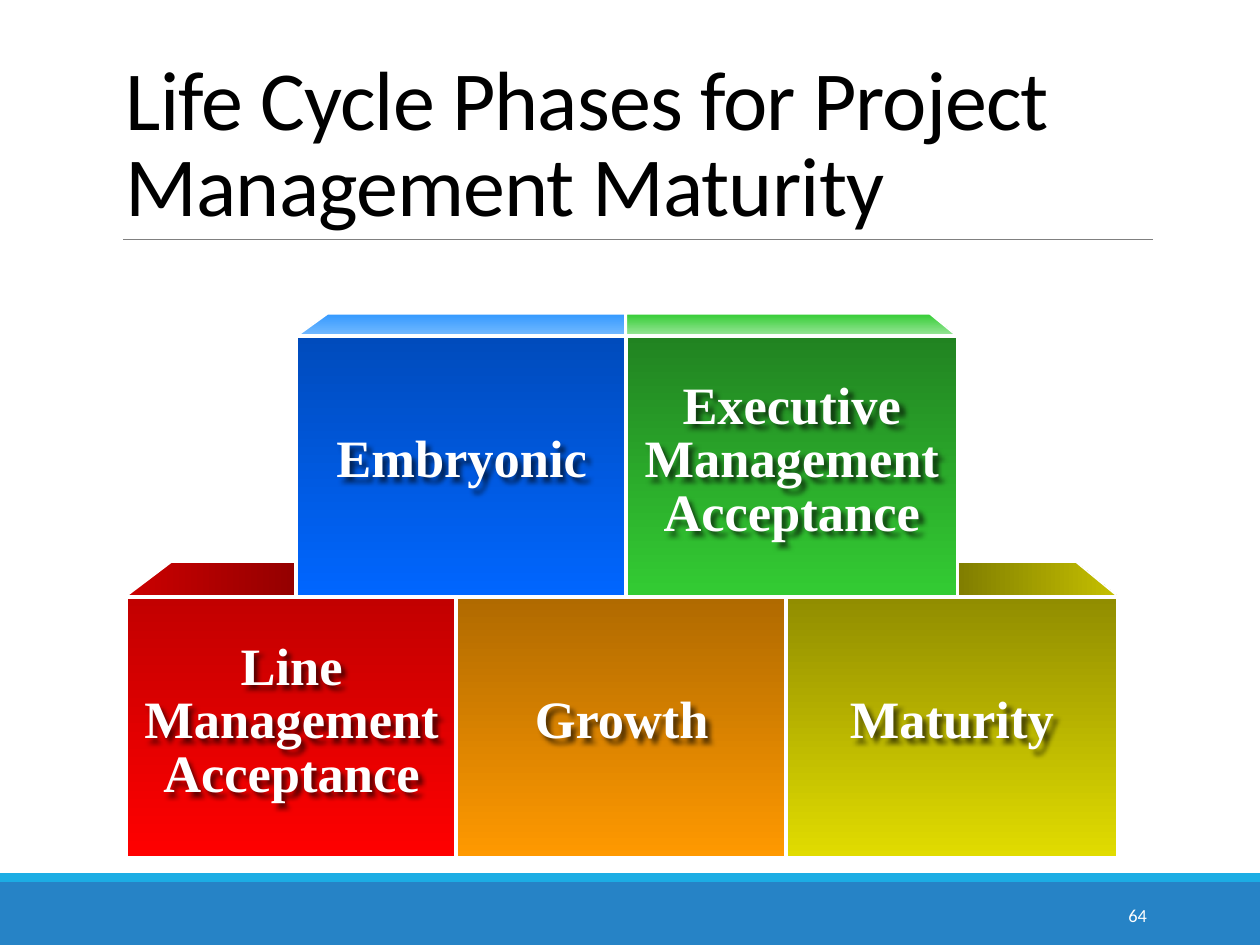
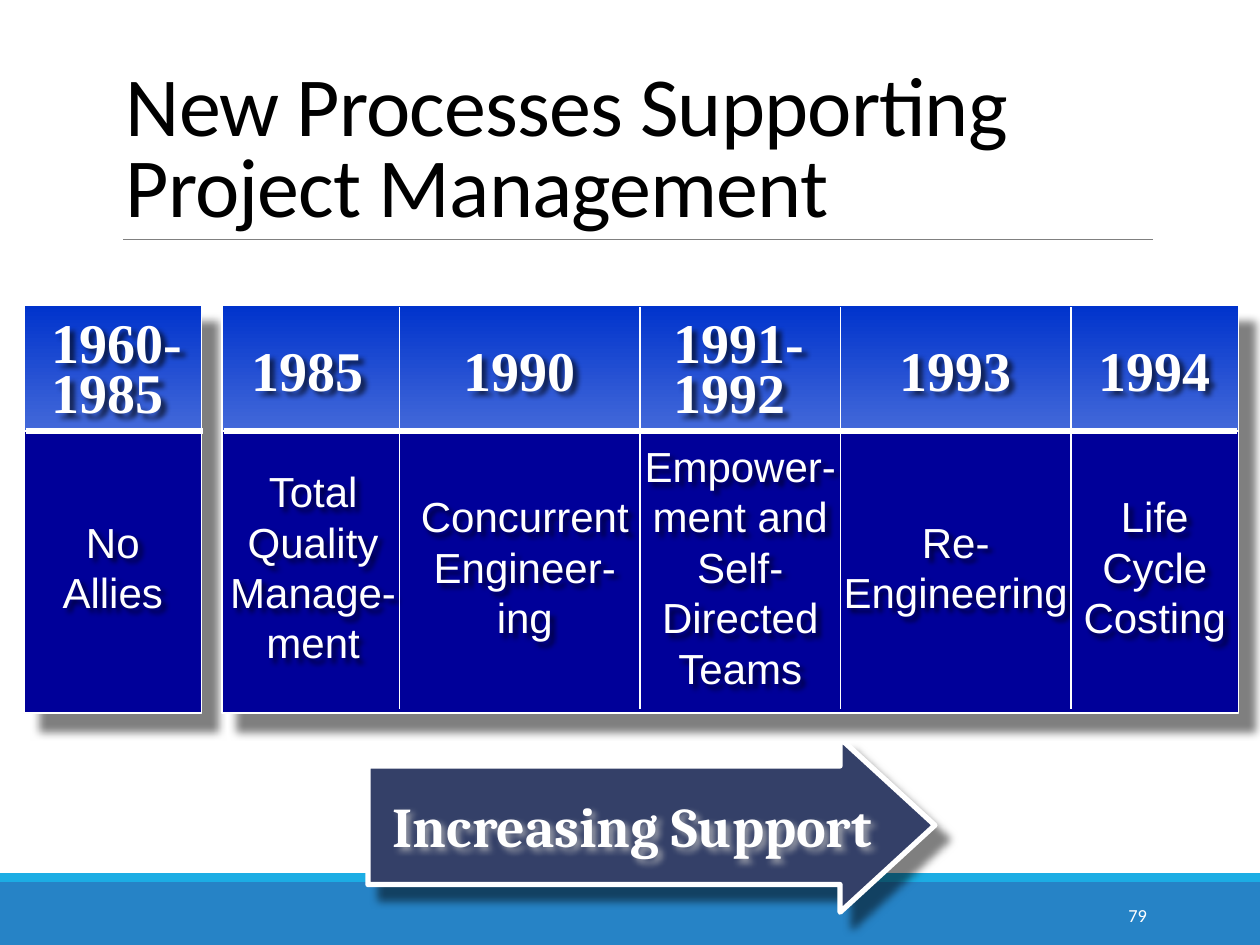
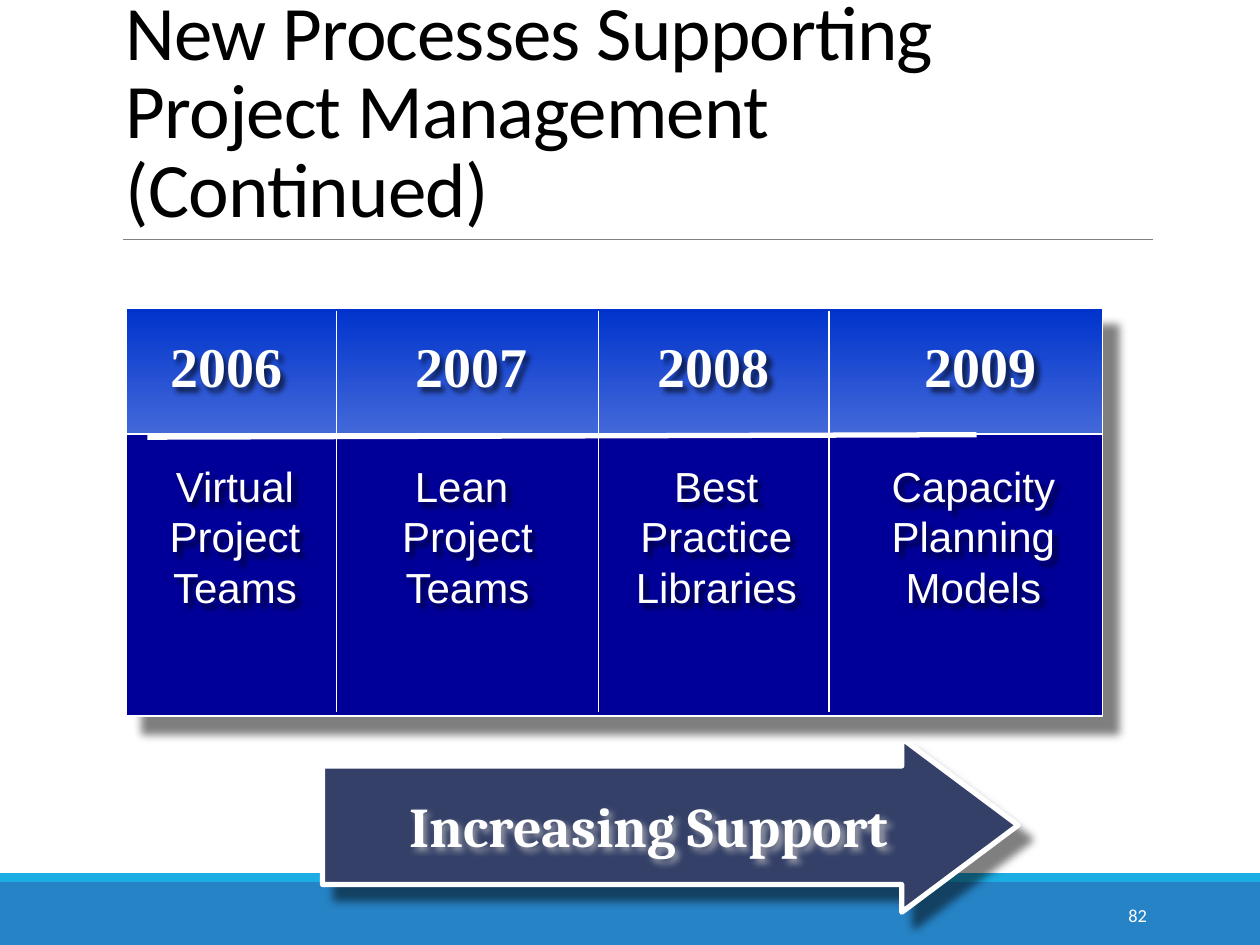
from dataclasses import dataclass

from lxml.etree import SubElement
from pptx import Presentation
from pptx.dml.color import RGBColor
from pptx.enum.shapes import MSO_CONNECTOR, MSO_SHAPE
from pptx.enum.text import MSO_ANCHOR as Anchor, PP_ALIGN as Align
from pptx.oxml.ns import qn
from pptx.util import Inches, Pt

COLUMNS, ROWS = 100, 75  # grid of the slide
INSET = 1  # side inset of a text box, in columns

WHITE, BLACK = "FFFFFF", "000000"
NAVY, ARROW, RULE = "000099", "344068", "808080"
BAND, BAND_EDGE = "2683C6", "1CADE4"
HEAD_FADE = ("0033CC", "4369D9")
SERIF, SANS, TITLE_FONT, ARROW_FONT = "Times New Roman", "Arial", "Calibri", "Cambria"

# Shadows: colour, opacity %, blur pt, distance pt, angle
PANEL_SHADOW = (BLACK, 50, 5, 13.5, 48)
ARROW_SHADOW = (BLACK, 50, 5, 10.6, 49)
TEXT_SHADOW = (BLACK, 60, 3, 3.5, 45)
TEXT_GLOW = ("C0C0C0", 70, 4, 2.5, 45)


def rgb(hex_string):
    return RGBColor.from_string(hex_string)


@dataclass
class Period:
    """One column of a timeline; shifts move a text off the column's middle."""
    width: float
    years: str
    process: str
    years_shift: float = 0
    process_shift: float = 0


class Deck:
    def __init__(self):
        self.prs = Presentation()
        self.prs.slide_width, self.prs.slide_height = Inches(10), Inches(7.5)
        self.slide = None

    def x(self, columns):
        return round(self.prs.slide_width * columns / COLUMNS)

    def y(self, rows):
        return round(self.prs.slide_height * rows / ROWS)

    def place(self, left, top, width, height):
        return self.x(left), self.y(top), self.x(width), self.y(height)

    # Slide frame: bands, rule, title and number
    def new_slide(self, title, number, size=48, spacing=0.85):
        self.slide = self.prs.slides.add_slide(self.prs.slide_layouts[6])
        self.shape((0, 70, COLUMNS, 5), BAND)
        self.shape((0, 69.3, COLUMNS, 0.7), BAND_EDGE)
        self.line((9.8, 19), (91.5, 19), RULE, 0.5)
        self.text((9, 3.1, 82.5, 15.9), title, TITLE_FONT, size, color=BLACK,
                  align=Align.LEFT, anchor=Anchor.BOTTOM, spacing=spacing, tracking=-50)
        self.text((81.2, 70.6, 10.8, 4), number, TITLE_FONT, 10.5, align=Align.RIGHT)

    # Fill is one colour or a pair of gradient colours
    def paint(self, shape, fill, outline, weight, angle, shadow):
        if isinstance(fill, tuple):
            shape.fill.gradient()
            shape.fill.gradient_angle = angle
            for stop, color, position in zip(shape.fill.gradient_stops, fill, (0, 1)):
                stop.color.rgb = rgb(color)
                stop.position = position
        else:
            shape.fill.solid()
            shape.fill.fore_color.rgb = rgb(fill)
        if outline:
            shape.line.color.rgb = rgb(outline)
            shape.line.width = Pt(weight)
        else:
            shape.line.fill.background()
        self.cast(shape, shadow)

    def cast(self, shape, shadow):
        shape.shadow.inherit = False
        if shadow:
            color, opacity, blur, distance, angle = shadow
            effects = shape._element.spPr.find(qn("a:effectLst"))
            outer = SubElement(effects, qn("a:outerShdw"), blurRad=str(Pt(blur)),
                               dist=str(Pt(distance)), dir=str(angle * 60000),
                               algn="tl", rotWithShape="0")
            tint = SubElement(outer, qn("a:srgbClr"), val=color)
            SubElement(tint, qn("a:alpha"), val=str(opacity * 1000))

    def shape(self, box, fill, outline=None, weight=1, shadow=None,
              kind=MSO_SHAPE.RECTANGLE, adjust=()):
        shape = self.slide.shapes.add_shape(kind, *self.place(*box))
        for i, value in enumerate(adjust):
            shape.adjustments[i] = value
        self.paint(shape, fill, outline, weight, 270, shadow)

    def polygon(self, points, fill, angle):
        start, *rest = [(self.x(px), self.y(py)) for px, py in points]
        builder = self.slide.shapes.build_freeform(*start, scale=1.0)
        builder.add_line_segments(rest, close=True)
        self.paint(builder.convert_to_shape(), fill, WHITE, 1, angle, None)

    def line(self, start, end, color=WHITE, weight=1):
        line = self.slide.shapes.add_connector(
            MSO_CONNECTOR.STRAIGHT, self.x(start[0]), self.y(start[1]),
            self.x(end[0]), self.y(end[1]))
        line.line.color.rgb = rgb(color)
        line.line.width = Pt(weight)
        SubElement(line._element.spPr, qn("a:effectLst"))

    def text(self, box, words, font, size, color=WHITE, bold=False, align=Align.CENTER,
             anchor=Anchor.MIDDLE, spacing=None, tracking=None, wrap=True, shadow=None):
        holder = self.slide.shapes.add_textbox(*self.place(*box))
        self.cast(holder, shadow)
        frame = holder.text_frame
        frame.word_wrap = wrap
        frame.margin_left = frame.margin_right = self.x(INSET)
        frame.vertical_anchor = anchor
        paragraph = frame.paragraphs[0]
        paragraph.alignment = align
        if spacing:
            paragraph.line_spacing = spacing
        for i, part in enumerate(words.split("\n")):
            if i:
                paragraph.add_line_break()
            run = paragraph.add_run()
            run.text = part
            run.font.name, run.font.size, run.font.bold = font, Pt(size), bold
            run.font.color.rgb = rgb(color)
            if tracking:
                run._r.get_or_add_rPr().set("spc", str(tracking))

    # Block of the wall with its label
    def block(self, left, top, width, height, label, fade):
        self.shape((left, top, width, height), fade, WHITE, 2.25)
        self.text((left, top - 0.4, width, height), label, SERIF, 30, bold=True,
                  spacing=0.85, shadow=TEXT_SHADOW)

    # Timeline panel: faded head with years over a dark body with processes
    def timeline(self, left, top, periods, years_middle, process_middle):
        width = sum(period.width for period in periods)
        self.shape((left, top, width, 32.4), NAVY, WHITE, 1, PANEL_SHADOW)
        self.shape((left, top, width, 10), HEAD_FADE, WHITE)
        edge = left
        for period in periods:
            if edge > left:
                self.line((edge, top + 0.2), (edge, top + 32.1))
            middle = edge + period.width / 2
            years_at = middle + period.years_shift
            stacked = "\n" in period.years
            if stacked:
                box = (years_at - 6.25, years_middle - 4.2, 12.5, 9.1)
            else:
                box = (years_at - 5.5, years_middle - 3.2, 11, 6.4)
            self.text(box, period.years, SERIF, 32, bold=True, wrap=False,
                      align=Align.LEFT if stacked else Align.CENTER,
                      spacing=0.75 if stacked else None, shadow=TEXT_SHADOW)
            # The insets lie outside the column, so the text has its whole width
            self.text((edge + period.process_shift - INSET, process_middle - 10.6,
                       period.width + 2 * INSET, 21.2),
                      period.process, SANS, 24, wrap=False, shadow=TEXT_SHADOW)
            edge += period.width

    def support_arrow(self, left, width, head, label_left):
        self.shape((left, 58.6, width, 13.8), ARROW, WHITE, 3, ARROW_SHADOW,
                   MSO_SHAPE.RIGHT_ARROW, (0.682, head))
        self.text((label_left, 62.3, 41.2, 6.4), "Increasing Support", ARROW_FONT, 32,
                  bold=True, align=Align.LEFT, wrap=False, shadow=TEXT_GLOW)


def maturity_phases(deck):
    deck.new_slide("Life Cycle Phases for Project Management Maturity", "64")
    step, width, height = 26.2, 26.3, 20.7
    lower_top = 47.4
    upper_top = lower_top - height

    # Lids seen from above
    lids = [
        ([(9.9, 47.4), (13.6, 44.6), (36.1, 44.6), (36.1, 47.4)], ("CC0000", "5E0000"), 0),
        ([(88.8, 47.4), (85.4, 44.6), (62.4, 44.6), (62.4, 47.4)], ("343300", "C6C100"), 0),
        ([(23.5, 26.7), (26, 24.9), (49.6, 24.9), (49.6, 26.7)], ("3399FF", "77BBFF"), 270),
        ([(76, 26.7), (73.8, 24.9), (49.7, 24.9), (49.7, 26.7)], ("33CC33", "9EE79E"), 270),
    ]
    for points, fade, angle in lids:
        deck.polygon(points, fade, angle)

    # Two courses of blocks
    courses = [
        (10, lower_top, [("Line\nManagement\nAcceptance", ("C20000", "FF0000")),
                         ("Growth", ("B06A00", "FF9900")),
                         ("Maturity", ("918D00", "E1DC00"))]),
        (23.5, upper_top, [("Embryonic", ("004BBC", "0066FF")),
                           ("Executive\nManagement\nAcceptance", ("218321", "33CC33"))]),
    ]
    for left, top, phases in courses:
        for i, (label, fade) in enumerate(phases):
            deck.block(left + i * step, top, width, height, label, fade)


def early_processes(deck):
    deck.new_slide("New Processes Supporting Project Management", "79", spacing=0.8)
    deck.support_arrow(29.2, 45, 0.545, 30.2)
    deck.timeline(1.9, 24.2, [Period(14.1, "1960-\n1985", "No\nAllies", 0.4)], 29.3, 44.95)
    deck.timeline(17.6, 24.2, [
        Period(14.1, "1985", "Total\nQuality\nManage-\nment", -0.2, 0.2),
        Period(19.1, "1990", "Concurrent\nEngineer-\ning", 0, 0.4),
        Period(15.9, "1991-\n1992", "Empower-\nment and\nSelf-\nDirected\nTeams"),
        Period(18.3, "1993", "Re-\nEngineering"),
        Period(13.3, "1994", "Life\nCycle\nCosting"),
    ], 29.3, 44.95)
    for start, end in [(2.1, 16.1), (17.8, 98.2)]:
        deck.line((start, 34.2), (end, 34.2), weight=3)


def later_processes(deck):
    deck.new_slide("New Processes Supporting Project Management (Continued)", "82", size=44)
    deck.support_arrow(25.6, 55.2, 0.669, 31.5)
    deck.timeline(10, 24.45, [
        Period(16.7, "2006", "Virtual\nProject\nTeams", -0.4, 0.3),
        Period(20.8, "2007", "Lean \nProject\nTeams", 0.3),
        Period(18.3, "2008", "Best\nPractice\nLibraries", 0, 0.2),
        Period(21.7, "2009", "Capacity\nPlanning\nModels", 1.2, 0.6),
    ], 29, 42.55)
    deck.line((11.7, 34.7), (77.5, 34.5), weight=3)


def main():
    deck = Deck()
    maturity_phases(deck)
    early_processes(deck)
    later_processes(deck)
    deck.prs.save("out.pptx")


if __name__ == "__main__":
    main()
